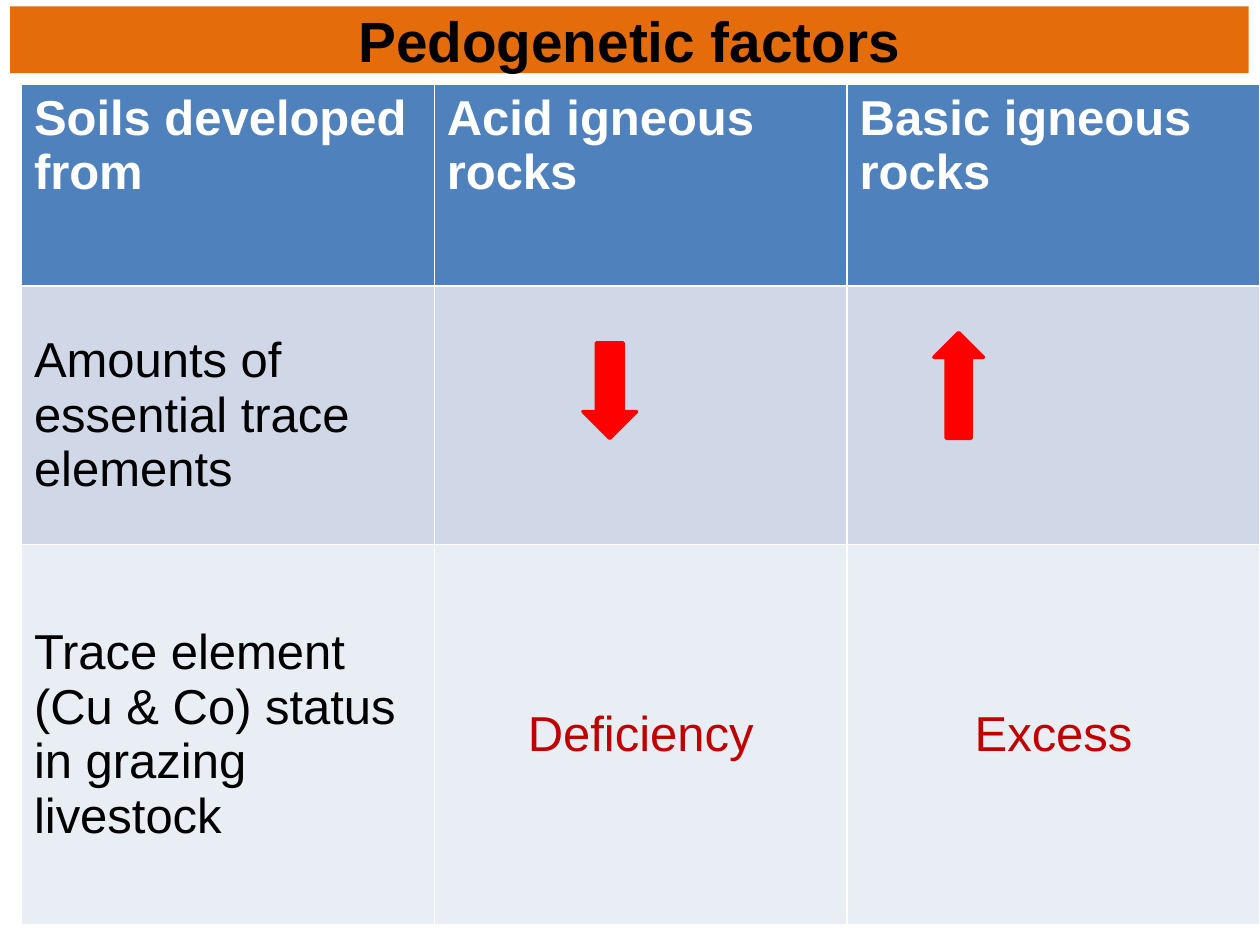
from pptx import Presentation
from pptx.dml.color import RGBColor
from pptx.enum.shapes import MSO_SHAPE as Shape
from pptx.enum.text import MSO_ANCHOR as Anchor, PP_ALIGN as Align
from pptx.util import Inches, Pt

BLACK = RGBColor(0x00, 0x00, 0x00)
WHITE = RGBColor(0xFF, 0xFF, 0xFF)
ORANGE = RGBColor(0xE4, 0x6C, 0x0A)
BLUE = RGBColor(0x4F, 0x81, 0xBD)
MIST = RGBColor(0xD0, 0xD8, 0xE8)
PALE = RGBColor(0xE9, 0xED, 0xF4)
RED = RGBColor(0xFF, 0x00, 0x00)
CRIMSON = RGBColor(0xC0, 0x00, 0x00)

TITLE_BOX = (0.08, 0.05, 9.83, 0.53)
TABLE_BOX = (0.17, 0.67, 9.83, 6.67)
ROWS = (1.6, 2.05, 3.02)
FILLS = (BLUE, MIST, PALE)
CELLS = (
    ("Soils developed from", "Acid igneous rocks", "Basic igneous rocks"),
    ("Amounts of essential trace elements", "", ""),
    ("Trace element (Cu & Co) status in grazing livestock", "Deficiency", "Excess"),
)
ARROWS = (
    (1, Shape.DOWN_ARROW, (0.36, 0.22, 0.13, 0.37)),
    (2, Shape.UP_ARROW, (0.21, 0.18, 0.12, 0.41)),
)


def style(par, size, color, bold, align):
    """Set the alignment and font of a paragraph."""
    par.alignment = align
    for run in par.runs:
        font = run.font
        font.name, font.size, font.bold = "Arial", Pt(size), bold
        font.color.rgb = color


def add_title(slide, box):
    """Fill the title placeholder as an orange band."""
    title = slide.shapes.title
    title.left, title.top, title.width, title.height = map(Inches, box)
    title.fill.solid()
    title.fill.fore_color.rgb = ORANGE
    frame = title.text_frame
    frame.text = "Pedogenetic factors"
    frame.vertical_anchor = Anchor.MIDDLE
    style(frame.paragraphs[0], 32.4, BLACK, True, Align.CENTER)


def add_grid(slide, box):
    """Place the soil table in the box."""
    table = slide.shapes.add_table(3, 3, *map(Inches, box)).table
    for r, texts in enumerate(CELLS):
        table.rows[r].height = Inches(ROWS[r])
        for c, text in enumerate(texts):
            cell = table.cell(r, c)
            cell.fill.solid()
            cell.fill.fore_color.rgb = FILLS[r]
            cell.text = text
            cell.vertical_anchor = Anchor.MIDDLE if r else Anchor.TOP
            status = r == 2 and c > 0
            color = CRIMSON if status else BLACK if r else WHITE
            align = Align.CENTER if status else Align.LEFT
            style(cell.text_frame.paragraphs[0], 28, color, r == 0, align)


def add_arrows(slide, box):
    """Place the trend arrows in the middle row of the table box."""
    left, top, width, _ = box
    wide, tall = width / 3, ROWS[1]
    for col, kind, (x, y, w, h) in ARROWS:
        spot = (left + (col + x) * wide, top + ROWS[0] + y * tall, w * wide, h * tall)
        arrow = slide.shapes.add_shape(kind, *map(Inches, spot))
        arrow.shadow.inherit = False
        arrow.fill.solid()
        arrow.fill.fore_color.rgb = RED
        arrow.line.color.rgb = RED
        arrow.line.width = Pt(2)


def main():
    """Build and save the slide."""
    deck = Presentation()
    deck.slide_width, deck.slide_height = Inches(10), Inches(7.5)
    slide = deck.slides.add_slide(deck.slide_layouts[5])
    add_title(slide, TITLE_BOX)
    add_grid(slide, TABLE_BOX)
    add_arrows(slide, TABLE_BOX)
    deck.save("out.pptx")


if __name__ == "__main__":
    main()
